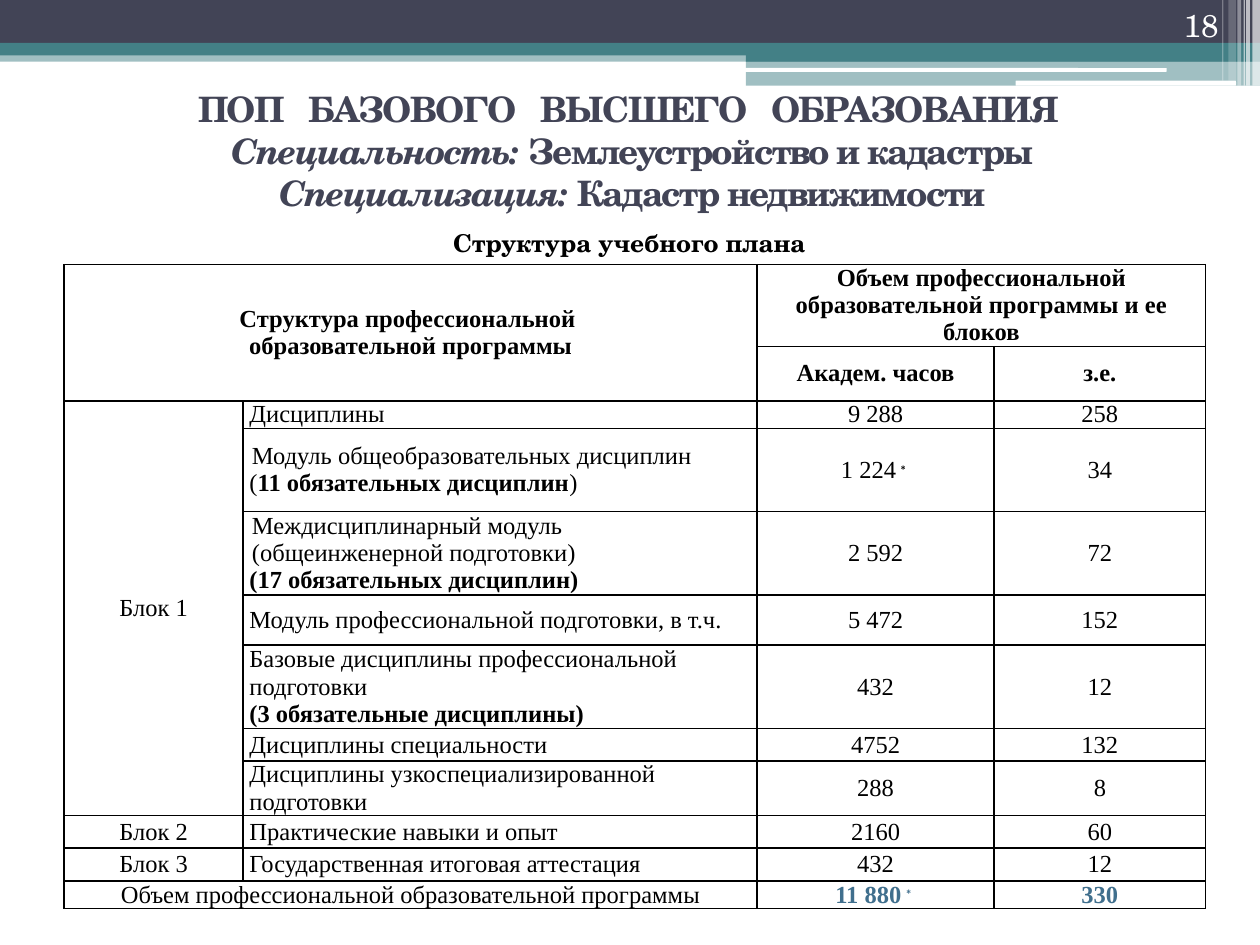
from lxml.etree import SubElement
from pptx import Presentation
from pptx.dml.color import RGBColor
from pptx.enum.shapes import MSO_SHAPE
from pptx.enum.text import MSO_ANCHOR, PP_ALIGN
from pptx.oxml.ns import qn
from pptx.util import Inches, Pt

NAVY = RGBColor(0x42, 0x44, 0x56)
TEAL = RGBColor(0x43, 0x80, 0x86)
BLUE = RGBColor(0x40, 0x6F, 0x8D)
WHITE = RGBColor(0xFF, 0xFF, 0xFF)
BLACK = RGBColor(0, 0, 0)

SERIF = "TeX Gyre Schola"
BODY = {"name": "Times New Roman", "size": Pt(14), "color": BLACK}
HEADING = {"name": SERIF, "size": Pt(20), "color": NAVY, "bold": True, "spacing": -1}
CAPTION = {"name": SERIF, "size": Pt(14), "color": BLACK, "bold": True}
PAGE_NUMBER = {"name": SERIF, "size": Pt(18), "color": WHITE}

BOLD = {"bold": True}
ITALIC = {"italic": True}
RAISED = {"baseline": 30}
TOTAL = {"bold": True, "color": BLUE}
WORD_GAP = {"spacing": 8}

# left, top, width, height, colour, opacity in percent
BANDS = [
    (0, 0.4, 10, 0.09, TEAL, 50),
    (0, 0, 10, 0.34, NAVY, 100),
    (0, 0.34, 10, 0.1, TEAL, 100),
    (5.92, 0.39, 4.08, 0.1, TEAL, 100),
    (5.92, 0.48, 4.08, 0.2, TEAL, 50),
]
ROUNDED_BARS = [(5.91, 0.54, 3.35, 0.03), (8.06, 0.64, 1.75, 0.04)]
# left, width, height, opacity in percent
STRIPES = [
    (9.94, 0.06, 0.68, 65), (9.89, 0.03, 0.68, 65), (9.87, 0.01, 0.68, 60),
    (9.82, 0.03, 0.68, 40), (9.75, 0.06, 0.64, 20), (9.7, 0.01, 0.64, 30),
]

COLUMN_WIDTHS = [1.42, 4.08, 1.88, 1.68]
ROW_HEIGHTS = [0.65, 0.43, 0.22, 0.66, 0.66, 0.4, 0.66, 0.26, 0.43, 0.26, 0.26, 0.22]
MERGES = [((0, 0), (1, 1)), ((0, 2), (0, 3)), ((2, 0), (8, 0)), ((11, 0), (11, 1))]
CELL_LINE = Pt(15.5)
INDENT = 0.02

HEADER_CELLS = {
    (0, 0): [[("Структура профессиональной ", BOLD)], [("образовательной программы", BOLD)]],
    (0, 2): [[("Объем профессиональной образовательной программы и ее блоков", BOLD)]],
    (1, 2): [[("Академ. часов", BOLD)]],
    (1, 3): [[("з.е.", BOLD)]],
}
# block, paragraphs of the name, hours, credits, indent of the first paragraph
BODY_ROWS = [
    ("Блок 1", [[("Дисциплины", {})]], [("9 288", {})], "258", 0),
    ("", [[("Модуль общеобразовательных дисциплин", {})],
          [("(", {}), ("11 обязательных дисциплин", BOLD), (")", {})]],
     [("1 224", {}), ("∗", RAISED)], "34", INDENT),
    ("", [[("Междисциплинарный модуль (общеинженерной подготовки)", {})],
          [("(17 обязательных дисциплин)", BOLD)]], [("2 592", {})], "72", INDENT),
    ("", [[("Модуль профессиональной подготовки, в т.ч.", {})]], [("5 472", {})], "152", 0),
    ("", [[("Базовые дисциплины профессиональной подготовки", {})],
          [("(3 обязательные дисциплины)", BOLD)]], [("432", {})], "12", 0),
    ("", [[("Дисциплины специальности", {})]], [("4752", {})], "132", 0),
    ("", [[("Дисциплины узкоспециализированной подготовки", {})]], [("288", {})], "8", 0),
    ("Блок 2", [[("Практические навыки и опыт", {})]], [("2160", {})], "60", 0),
    ("Блок 3", [[("Государственная итоговая аттестация", {})]], [("432", {})], "12", 0),
]
TOTAL_CELLS = {
    (11, 0): [[("Объем профессиональной образовательной программы", {})]],
    (11, 2): [[("11 880", TOTAL), ("∗", TOTAL | RAISED)]],
    (11, 3): [[("330", TOTAL)]],
}


class SlideBuilder:
    """Holds the current slide and draws each kind of element on it."""

    def __init__(self, page):
        self.page = page

    def bar(self, left, top, width, height, color, opacity=100, preset=MSO_SHAPE.RECTANGLE):
        shape = self.page.shapes.add_shape(
            preset, Inches(left), Inches(top), Inches(width), Inches(height))
        shape.shadow.inherit = False
        shape.line.fill.background()
        shape.fill.solid()
        shape.fill.fore_color.rgb = color
        if opacity < 100:
            fill = shape.fill._xPr.find(qn("a:solidFill"))
            SubElement(fill[0], qn("a:alpha"), val=str(opacity * 1000))

    def spans(self, para, parts, style):
        for text, changes in parts:
            if text == "\n":
                para.add_line_break()
                continue
            span = para.add_run()
            span.text = text
            properties = span._r.get_or_add_rPr()
            for key, value in (style | changes).items():
                if key == "color":
                    span.font.color.rgb = value
                elif key == "spacing":
                    properties.set("spc", str(value * 100))
                elif key == "baseline":
                    properties.set("baseline", str(value * 1000))
                else:
                    setattr(span.font, key, value)

    def paragraphs(self, frame, contents, style, align, indent=0, line=None):
        """Fill a text frame; the indent applies to the first paragraph only."""
        for index, parts in enumerate(contents):
            para = frame.add_paragraph() if index else frame.paragraphs[0]
            para.alignment = align
            para.line_spacing = line
            if indent and index == 0:
                para._p.get_or_add_pPr().set("marL", str(Inches(indent)))
            self.spans(para, parts, style)

    def text(self, left, top, width, height, contents, style,
             align=PP_ALIGN.CENTER, anchor=MSO_ANCHOR.TOP):
        box = self.page.shapes.add_textbox(
            Inches(left), Inches(top), Inches(width), Inches(height))
        box.text_frame.word_wrap = True
        box.text_frame.vertical_anchor = anchor
        self.paragraphs(box.text_frame, contents, style, align)

    def table(self, left, top, widths, heights, merges):
        table = self.page.shapes.add_table(
            len(heights), len(widths), Inches(left), Inches(top),
            Inches(sum(widths)), Inches(sum(heights))).table
        table.first_row = table.horz_banding = False
        for column, width in zip(table.columns, widths):
            column.width = Inches(width)
        for row, height in zip(table.rows, heights):
            row.height = Inches(height)
        for cell in table.iter_cells():
            self.frame_cell(cell)
        for first, last in merges:
            table.cell(*first).merge(table.cell(*last))
        return table

    def frame_cell(self, cell):
        layout = {"margin_left": Inches(0.05), "margin_right": Inches(0.05),
                  "margin_top": 0, "margin_bottom": 0,
                  "vertical_anchor": MSO_ANCHOR.MIDDLE}
        for key, value in layout.items():
            setattr(cell, key, value)
        properties = cell._tc.get_or_add_tcPr()
        for side in ("lnL", "lnR", "lnT", "lnB"):
            line = SubElement(properties, qn(f"a:{side}"), w=str(Pt(1)))
            SubElement(SubElement(line, qn("a:solidFill")), qn("a:srgbClr"), val=str(BLACK))
        cell.fill.background()

    def cell(self, table, position, contents, align=PP_ALIGN.CENTER, indent=0):
        frame = table.cell(*position).text_frame
        self.paragraphs(frame, contents, BODY, align, indent, CELL_LINE)


def heading_paragraphs():
    """Two paragraphs; the words of the first line stand wide apart."""
    first_line = []
    for word in "ПОП БАЗОВОГО ВЫСШЕГО ОБРАЗОВАНИЯ".split():
        first_line += [(word, {}), (" ", WORD_GAP)]
    first_line[-1] = (" ", {})
    speciality = [("\n", {}), ("Специальность: ", ITALIC), ("Землеустройство и кадастры", {})]
    specialization = [("Специализация: ", ITALIC), ("Кадастр недвижимости", {})]
    return [first_line + speciality, specialization]


def main():
    deck = Presentation()
    deck.slide_width, deck.slide_height = Inches(10), Inches(7.5)
    builder = SlideBuilder(deck.slides.add_slide(deck.slide_layouts[6]))

    for band in BANDS:
        builder.bar(*band)
    for bar in ROUNDED_BARS:
        builder.bar(*bar, WHITE, preset=MSO_SHAPE.ROUNDED_RECTANGLE)
    for left, width, height, opacity in STRIPES:
        builder.bar(left, 0, width, height, WHITE, opacity)

    builder.text(8.94, 0, 0.83, 0.4, [[("18", {})]], PAGE_NUMBER,
                 PP_ALIGN.RIGHT, MSO_ANCHOR.BOTTOM)
    builder.text(0.16, 0.29, 9.72, 1.81, heading_paragraphs(), HEADING,
                 anchor=MSO_ANCHOR.MIDDLE)

    plan = builder.table(0.51, 2.1, COLUMN_WIDTHS, ROW_HEIGHTS, MERGES)
    for position, contents in (HEADER_CELLS | TOTAL_CELLS).items():
        builder.cell(plan, position, contents)
    for row, (block, name, hours, credits, indent) in enumerate(BODY_ROWS, start=2):
        if block:
            builder.cell(plan, (row, 0), [[(block, {})]])
        builder.cell(plan, (row, 1), name, PP_ALIGN.LEFT, indent)
        builder.cell(plan, (row, 2), [hours])
        builder.cell(plan, (row, 3), [[(credits, {})]])

    builder.text(0.43, 1.76, 9.13, 0.34, [[("Структура учебного плана", {})]], CAPTION)
    deck.save("out.pptx")


if __name__ == "__main__":
    main()
